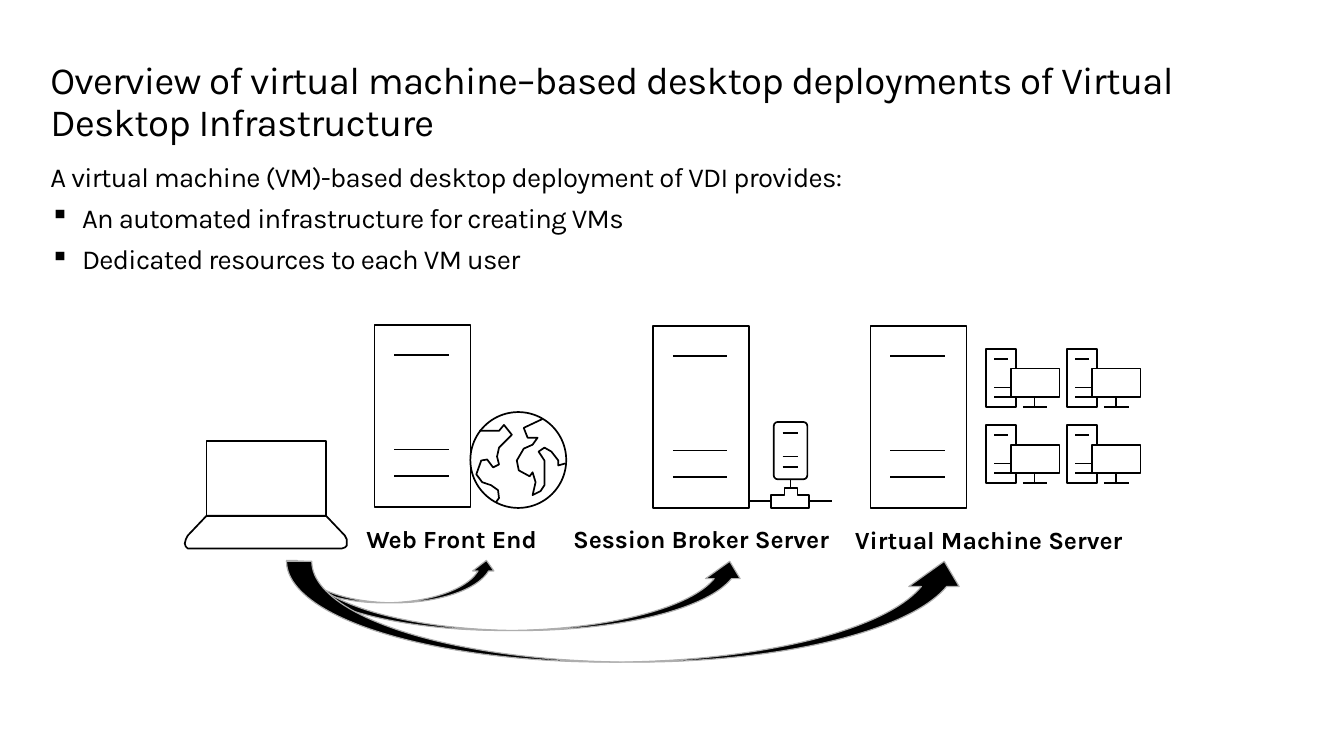
from lxml import etree
from pptx import Presentation
from pptx.dml.color import RGBColor
from pptx.enum.shapes import MSO_SHAPE
from pptx.enum.text import PP_ALIGN
from pptx.oxml.ns import qn
from pptx.util import Pt

PX = 9144  # EMU per px, 100 px to the inch
FONT = "Karla"
COLORS = {"ink": "000000", "edge": "AEAEAE"}
OVAL = MSO_SHAPE.OVAL
ROUND = MSO_SHAPE.ROUNDED_RECTANGLE
CURVE = MSO_SHAPE.CURVED_RIGHT_ARROW
CENTER = PP_ALIGN.CENTER

TITLE = ("Overview of virtual machine–based desktop deployments "
         "of Virtual Desktop Infrastructure")
INTRO = "A virtual machine (VM)-based desktop deployment of VDI provides:"
POINTS = ["An automated infrastructure for creating VMs",
          "Dedicated resources to each VM user"]
LABELS = [("Web Front End", 349, 525, 216),
          ("Session Broker Server", 565, 525, 289),
          ("Virtual Machine Server", 842, 526, 317)]
# Left, top, width and height of each arrow as it shows
ARROWS = [(290, 567, 213, 43), (290, 568, 466, 70), (290, 568, 691, 102)]
SERVERS = [(379, 329), (661, 330), (881, 330)]
BASE = [(187, 550), (188, 553), (190, 555), (193, 555), (346, 555), (349, 554),
        (351, 552), (351, 550), (351, 546), (349, 542), (330, 522), (209, 522),
        (190, 542), (188, 546), (187, 550)]
WEST = [(502, 508), (505, 504), (504, 496), (497, 491), (488, 488), (482, 480),
        (487, 466), (493, 465), (499, 473), (505, 470), (503, 462), (505, 453),
        (518, 440), (510, 430), (505, 436), (485, 436)]
EAST = [(549, 424), (530, 433), (534, 443), (544, 443), (539, 450), (530, 454),
        (523, 466), (525, 476), (536, 482), (539, 478), (542, 488), (539, 501),
        (547, 497), (551, 491), (551, 466), (545, 457), (551, 453), (558, 457),
        (565, 466), (565, 471), (572, 469)]
PLUG = [(780, 514), (780, 501), (794, 501), (794, 494), (807, 494), (807, 501),
        (819, 501), (819, 514), (780, 514)]


def color(name):
    return RGBColor.from_string(COLORS[name])


def outline(shape):
    shape.shadow.inherit = False
    shape.fill.background()
    shape.line.color.rgb = color("ink")
    shape.line.width = Pt(1.25)


def bar(left, right, y):
    return [(left, y), (right, y)]


def box(left, top, right, bottom):
    return [(left, top), (right, top), (right, bottom), (left, bottom), (left, top)]


def trace(shapes, strokes, x=0, y=0):
    """Draw polylines as one outline; a stroke that ends at its start is closed."""
    pen = None
    for stroke in strokes:
        start, *rest = [(x + dx, y + dy) for dx, dy in stroke]
        if pen is None:
            pen = shapes.build_freeform(*start, scale=PX)
        else:
            pen.move_to(*start)
        pen.add_line_segments(rest, close=rest[-1] == start)
    outline(pen.convert_to_shape())


def add_form(shapes, kind, left, top, width, height):
    return shapes.add_shape(kind, left * PX, top * PX, width * PX, height * PX)


def add_frame(shapes, left, top, width, height):
    frame = shapes.add_textbox(left * PX, top * PX, width * PX, height * PX).text_frame
    frame.word_wrap = True
    return frame


def style(para, text, size, bold=False, track=0):
    """Fill a paragraph; track is letter spacing in hundredths of a point."""
    para.text = text
    font = para.font
    font.name, font.size, font.bold = FONT, Pt(size), bold
    font.color.rgb = color("ink")
    if track:
        para.runs[0]._r.get_or_add_rPr().set("spc", str(track))


def add_bullet(para):
    props = para._p.get_or_add_pPr()
    props.set("marL", str(32 * PX))
    props.set("indent", str(-32 * PX))
    etree.SubElement(props, qn("a:buSzPct")).set("val", "95000")
    etree.SubElement(props, qn("a:buChar")).set("char", "▪")


def add_title(shapes):
    frame = add_frame(shapes, 51, 62, 1261, 45)
    frame.margin_left = frame.margin_top = frame.margin_bottom = 0
    para = frame.paragraphs[0]
    para.line_spacing = 0.9
    style(para, TITLE, 28, track=-50)


def add_body(shapes):
    frame = add_frame(shapes, 51, 162, 1261, 147)
    frame.margin_left = frame.margin_top = 0
    for i, text in enumerate([INTRO, *POINTS]):
        para = frame.add_paragraph() if i else frame.paragraphs[0]
        if i:
            add_bullet(para)
        para.space_before = Pt(6)
        style(para, text, 20, track=-50)


def add_label(shapes, text, left, top, width):
    para = add_frame(shapes, left, top, width, 40).paragraphs[0]
    para.alignment = CENTER
    style(para, text, 18, bold=True)


def add_arrow(shapes, left, top, width, height):
    """Turn a curved arrow on its side to fill the given area."""
    shift = (width - height) / 2
    arrow = add_form(shapes, CURVE, 0, 0, height, width)
    arrow.left, arrow.top = int((left + shift) * PX), int((top - shift) * PX)
    arrow.rotation = 270
    arrow.shadow.inherit = False
    arrow.fill.solid()
    arrow.fill.fore_color.rgb = color("ink")
    arrow.line.color.rgb = color("edge")
    arrow.line.width = Pt(0.85)


def add_server(shapes, x, y):
    bars = [bar(20, 75, dy) for dy in (30, 126, 153)]
    trace(shapes, [box(0, 0, 97, 184), *bars], x, y)


def add_desktop(shapes, x, y):
    case = [(30, 20), (30, 0), (0, 0), (0, 59), (30, 59), (30, 49)]
    stand = [(49, 49), (49, 59)]
    bars = [bar(8, 22, 10), bar(8, 25, 39), bar(8, 25, 49), bar(37, 62, 59)]
    trace(shapes, [box(25, 20, 74, 49), case, stand, *bars], x, y)


def add_laptop(shapes):
    trace(shapes, [box(209, 446, 330, 522), BASE])


def add_globe(shapes):
    outline(add_form(shapes, OVAL, 476, 417, 97, 97))
    trace(shapes, [WEST, EAST])


def add_node(shapes):
    """Draw the small networked host beside the broker."""
    host = add_form(shapes, ROUND, 783, 427, 34, 58)
    host.adjustments[0] = 0.12
    outline(host)
    bars = [bar(792, 808, y) for y in (438, 462, 473)]
    wires = [bar(758, 780, 507), bar(819, 842, 507), [(800, 494), (800, 485)]]
    trace(shapes, [PLUG, *wires, *bars])


def main():
    deck = Presentation()
    deck.slide_width, deck.slide_height = 1360 * PX, 765 * PX
    shapes = deck.slides.add_slide(deck.slide_layouts[6]).shapes
    add_title(shapes)
    add_body(shapes)
    for arrow in ARROWS:
        add_arrow(shapes, *arrow)
    for label in LABELS:
        add_label(shapes, *label)
    add_laptop(shapes)
    for spot in SERVERS:
        add_server(shapes, *spot)
    add_globe(shapes)
    add_node(shapes)
    for x in (998, 1080):
        for y in (353, 430):
            add_desktop(shapes, x, y)
    deck.save("out.pptx")


if __name__ == "__main__":
    main()
